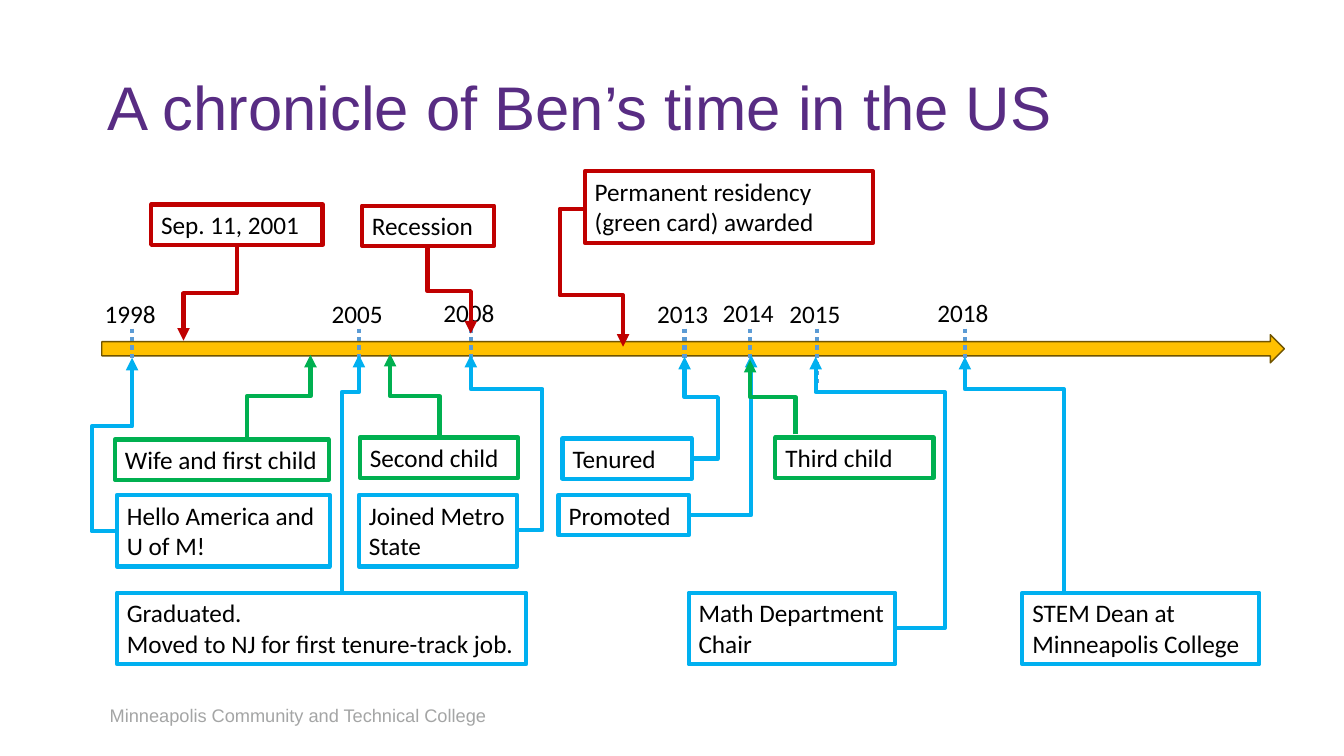
import dataclasses

import lxml.etree
import pptx
import pptx.dml.color
import pptx.enum.dml
import pptx.enum.shapes
import pptx.enum.text
import pptx.oxml.ns
import pptx.util

PX = 9144  # EMU per px, 100 px to the inch
qn = pptx.oxml.ns.qn
rgb = pptx.dml.color.RGBColor.from_string
SubElement = lxml.etree.SubElement


@dataclasses.dataclass(frozen=True)
class Theme:
    title: str = "582C83"
    footer: str = "A4A5A5"
    text: str = "000000"
    axis: str = "FFC000"
    axis_edge: str = "705400"
    tick: str = "5B9BD5"
    career: str = "00B0F0"
    family: str = "00B050"
    world: str = "C00000"
    heading_font: str = "Arial"
    body_font: str = "Calibri"
    title_size: int = 44
    body_size: int = 18
    footer_size: int = 13
    line_width: int = 3


theme = Theme()
deck = pptx.Presentation()
deck.slide_width, deck.slide_height = 1333 * PX, 750 * PX
slide = deck.slides.add_slide(deck.slide_layouts[5])
shapes = slide.shapes


def add_text(text, box, font_name, size, colour):
    label = shapes.add_textbox(*(n * PX for n in box))
    frame = label.text_frame
    frame.word_wrap = True
    frame.text = text
    for paragraph in frame.paragraphs:
        font = paragraph.runs[0].font
        font.name, font.size = font_name, pptx.util.Pt(size)
        font.color.rgb = rgb(colour)
    return label


def add_line(route, colour):
    """Draw a straight line or an elbow connector through the route's corners."""
    (x0, y0), (x1, y1) = route[0], route[-1]
    dx, dy = x1 - x0, y1 - y0
    rotated = len(route) == 4  # leaves vertically, so it is drawn turned by 90 degrees
    ends = (x0, y0, x1, y1)
    if rotated:
        cx, cy = (x0 + x1) / 2, (y0 + y1) / 2
        ends = (cx - dy / 2, cy + dx / 2, cx + dy / 2, cy - dx / 2)
    kind = pptx.enum.shapes.MSO_CONNECTOR.STRAIGHT
    if len(route) > 2:
        kind = pptx.enum.shapes.MSO_CONNECTOR.ELBOW
    connector = shapes.add_connector(kind, *(round(n * PX) for n in ends))
    connector.line.color.rgb = rgb(colour)
    connector.line.width = pptx.util.Pt(theme.line_width)
    properties = connector._element.spPr
    SubElement(properties, qn("a:effectLst"))
    if len(route) == 2:
        return connector

    # Elbow corners, as shares of the distance covered
    bends = []
    if rotated:
        properties.find(qn("a:xfrm")).set("rot", "5400000")
        bends = [("adj1", (route[1][1] - y0) / dy)]
    elif len(route) == 5:
        bends = [("adj1", (route[1][0] - x0) / dx), ("adj2", (route[2][1] - y0) / dy)]
    geometry = properties.find(qn("a:prstGeom"))
    geometry.set("prst", f"bentConnector{len(route) - 1}")
    for name, share in bends:
        SubElement(geometry.find(qn("a:avLst")), qn("a:gd"),
                   name=name, fmla=f"val {round(share * 100000)}")
    SubElement(properties.find(qn("a:ln")), qn("a:tailEnd"), type="triangle")
    return connector


# Footer with its soft text shadow
footer = add_text("Minneapolis Community and Technical College", (99, 694, 403, 32),
                  theme.heading_font, theme.footer_size, theme.footer)
footer.text_frame.word_wrap = False
run_properties = footer.text_frame.paragraphs[0].runs[0].font._element
effects = SubElement(run_properties, qn("a:effectLst"))
run_properties.find(qn("a:solidFill")).addnext(effects)
shadow = SubElement(effects, qn("a:outerShdw"), dist="12700", dir="5400000")
SubElement(shadow, qn("a:srgbClr"), val=theme.footer)

# Title
title = shapes.title
title.left, title.top, title.width, title.height = (n * PX for n in (94, 24, 1173, 125))
title_frame = title.text_frame
title_frame.text = "A chronicle of Ben’s time in the US"
title_frame.auto_size = pptx.enum.text.MSO_AUTO_SIZE.NONE
title_frame.vertical_anchor = pptx.enum.text.MSO_ANCHOR.BOTTOM
title_frame.margin_left = title_frame.margin_right = 13 * PX
title_frame.margin_top = title_frame.margin_bottom = 7 * PX
title_frame.paragraphs[0].alignment = pptx.enum.text.PP_ALIGN.LEFT
title_font = title_frame.paragraphs[0].runs[0].font
title_font.name = theme.heading_font
title_font.size = pptx.util.Pt(theme.title_size)
title_font.color.rgb = rgb(theme.title)

# Time axis
axis = shapes.add_shape(pptx.enum.shapes.MSO_SHAPE.RIGHT_ARROW,
                        *(n * PX for n in (101, 332, 1173, 28)))
axis.shadow.inherit = False
axis.fill.solid()
axis.fill.fore_color.rgb = rgb(theme.axis)
axis.line.color.rgb = rgb(theme.axis_edge)
axis.line.width = pptx.util.Pt(1)

# Years: text, tick position, label top
years = [("1998", 131, 291), ("2005", 356, 291), ("2008", 467, 290), ("2013", 679, 291),
         ("2014", 744, 290), ("2015", 810, 291), ("2018", 957, 290)]
for year, x, top in years:
    add_text(year, (x - 37, top, 74, 40), theme.body_font, theme.body_size, theme.text)
    tick = add_line([(x, 326), (x, 384)], theme.tick)
    tick.line.dash_style = pptx.enum.dml.MSO_LINE.ROUND_DOT

# Events: text, box, colour, route to the axis
events = [
    ("Hello America and U of M!", (116, 491, 211, 71), theme.career,
     [(116, 527), (91, 527), (91, 423), (131, 423), (131, 355)]),
    ("Graduated.\nMoved to NJ for first tenure-track job.", (116, 588, 406, 71), theme.career,
     [(339, 588), (339, 389), (356, 389), (356, 352)]),
    ("Joined Metro State", (356, 491, 157, 71), theme.career,
     [(513, 526), (538, 526), (538, 386), (467, 386), (467, 352)]),
    ("Tenured", (558, 435, 128, 40), theme.career,
     [(687, 455), (712, 455), (712, 394), (679, 394), (679, 354)]),
    ("Promoted", (554, 491, 129, 40), theme.career,
     [(683, 511), (745, 511), (745, 352)]),
    ("Math Department Chair", (683, 588, 205, 71), theme.career,
     [(888, 623), (937, 623), (937, 389), (809, 389), (809, 354)]),
    ("STEM Dean at\nMinneapolis College", (1014, 588, 235, 71), theme.career,
     [(1055, 587), (1055, 386), (957, 386), (957, 354)]),
    ("Wife and first child", (114, 436, 212, 40), theme.family,
     [(245, 435), (245, 393), (308, 393), (308, 352)]),
    ("Second child", (357, 434, 157, 40), theme.family,
     [(436, 434), (436, 393), (387, 393), (387, 351)]),
    ("Third child", (769, 434, 157, 40), theme.family,
     [(789, 431), (789, 394), (744, 394), (744, 357)]),
    ("Permanent residency (green card) awarded", (580, 170, 286, 71), theme.world,
     [(580, 207), (555, 207), (555, 293), (618, 293), (618, 344)]),
    ("Sep. 11, 2001", (150, 203, 170, 40), theme.world,
     [(235, 244), (235, 291), (182, 291), (182, 338)]),
    ("Recession", (359, 204, 131, 40), theme.world,
     [(424, 244), (424, 289), (467, 289), (467, 331)]),
]
for text, box, colour, route in events:
    add_line(route, colour)
    event = add_text(text, box, theme.body_font, theme.body_size, theme.text)
    event.line.color.rgb = rgb(colour)
    event.line.width = pptx.util.Pt(theme.line_width)

deck.save("out.pptx")
